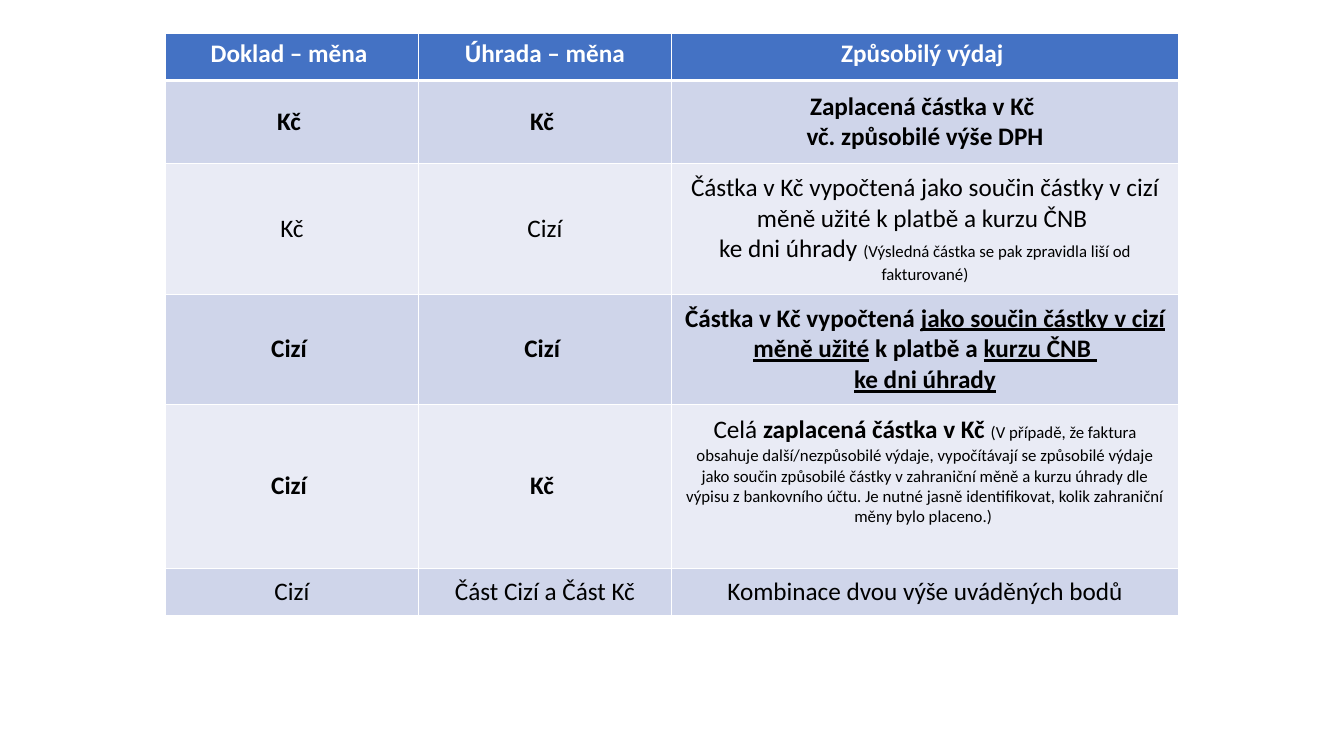
"""Build a slide with a table of eligible expenses by document and payment currency."""
from lxml import etree
from pptx import Presentation
from pptx.dml.color import RGBColor
from pptx.enum.text import MSO_ANCHOR, PP_ALIGN
from pptx.oxml import parse_xml
from pptx.oxml.ns import nsdecls
from pptx.util import Inches, Pt


def color(hex_string):
    return RGBColor.from_string(hex_string)


def add_borders(cell, widths):
    properties = cell._tc.get_or_add_tcPr()
    for position, (side, points) in enumerate(widths.items()):
        border = parse_xml(
            f'<a:ln{side} {nsdecls("a")} w="{Pt(points)}">'
            '<a:solidFill><a:srgbClr val="FFFFFF"/></a:solidFill>'
            f'</a:ln{side}>'
        )
        properties.insert(position, border)


HEADER_FILL = "4472C4"
BAND_FILLS = ["E9EBF5", "CFD5EA"]
COLUMN_WIDTHS = [2.51, 2.51, 5.03]
ROW_HEIGHTS = [0.47, 0.82, 1.3, 1.09, 1.63, 0.47]
CELL_MARGIN = 0.05

# Each run is (text, style): b = bold, u = underlined, s = small.
CURRENCY_RULES = [
    [[("Doklad – měna ", "b")], [("Úhrada – měna", "b")], [("Způsobilý výdaj ", "b")]],
    [[("Kč ", "b")], [("Kč ", "b")],
     [("Zaplacená částka v Kč \nvč. způsobilé výše DPH", "b")]],
    [[("Kč", "")], [("Cizí", "")],
     [("Částka v Kč vypočtená jako součin částky v cizí měně užité k platbě "
       "a kurzu ČNB \nke dni úhrady ", ""),
      ("(Výsledná částka se pak zpravidla liší od fakturované)", "s")]],
    [[("Cizí ", "b")], [("Cizí ", "b")],
     [("Částka v Kč vypočtená ", "b"),
      ("jako součin částky v cizí měně užité", "bu"),
      (" k platbě a ", "b"),
      ("kurzu ČNB \nke dni úhrady", "bu")]],
    [[("Cizí ", "b")], [("Kč ", "b")],
     [("Celá ", ""),
      ("zaplacená částka v Kč ", "b"),
      ("(V případě, že faktura obsahuje další/nezpůsobilé výdaje, vypočítávají se "
       "způsobilé výdaje jako součin způsobilé částky v zahraniční měně a kurzu úhrady "
       "dle výpisu z bankovního účtu. Je nutné jasně identifikovat, kolik zahraniční "
       "měny bylo placeno.) ", "s")]],
    [[("Cizí", "")], [("Část Cizí a Část Kč", "")],
     [("Kombinace dvou výše uváděných bodů", "")]],
]

presentation = Presentation()
presentation.slide_width = Inches(13.33)
presentation.slide_height = Inches(7.5)
slide = presentation.slides.add_slide(presentation.slide_layouts[6])

currency_table = slide.shapes.add_table(
    len(ROW_HEIGHTS), len(COLUMN_WIDTHS), Inches(1.64), Inches(0.33),
    Inches(sum(COLUMN_WIDTHS)), Inches(sum(ROW_HEIGHTS)),
).table
for column, width in zip(currency_table.columns, COLUMN_WIDTHS):
    column.width = Inches(width)
for row, height in zip(currency_table.rows, ROW_HEIGHTS):
    row.height = Inches(height)

for row_index, rule in enumerate(CURRENCY_RULES):
    is_header = row_index == 0
    for column_index, runs in enumerate(rule):
        cell = currency_table.cell(row_index, column_index)
        cell.vertical_anchor = MSO_ANCHOR.TOP if is_header else MSO_ANCHOR.MIDDLE
        cell.fill.solid()
        cell.fill.fore_color.rgb = color(HEADER_FILL if is_header else BAND_FILLS[row_index % 2])
        add_borders(cell, {"L": 1, "R": 1, "T": 3 if row_index == 1 else 1,
                           "B": 3 if is_header else 1})
        paragraph = cell.text_frame.paragraphs[0]
        paragraph.alignment = PP_ALIGN.CENTER
        for text, style in runs:
            for line_index, line in enumerate(text.split("\n")):
                if line_index:
                    paragraph.add_line_break()
                run = paragraph.add_run()
                run.text = line
                run.font.name = "Calibri"
                run.font.size = Pt(12 if "s" in style else 18)
                run.font.bold = "b" in style
                run.font.underline = "u" in style
                run.font.color.rgb = color("FFFFFF" if is_header else "000000")

paid_in_crowns = currency_table.cell(4, 2)
paid_in_crowns.margin_bottom = Inches(CELL_MARGIN + 0.3)

presentation.save("out.pptx")
